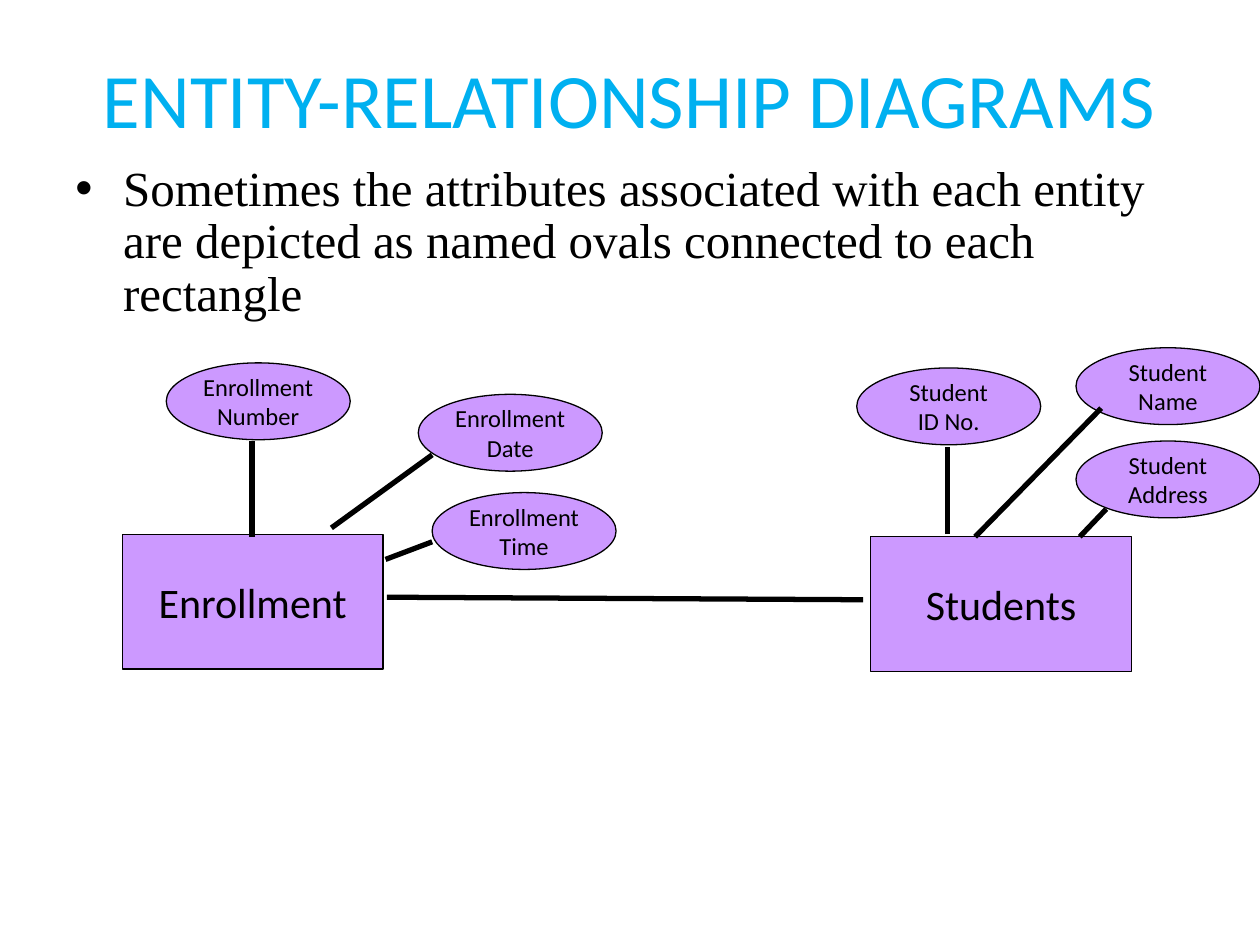
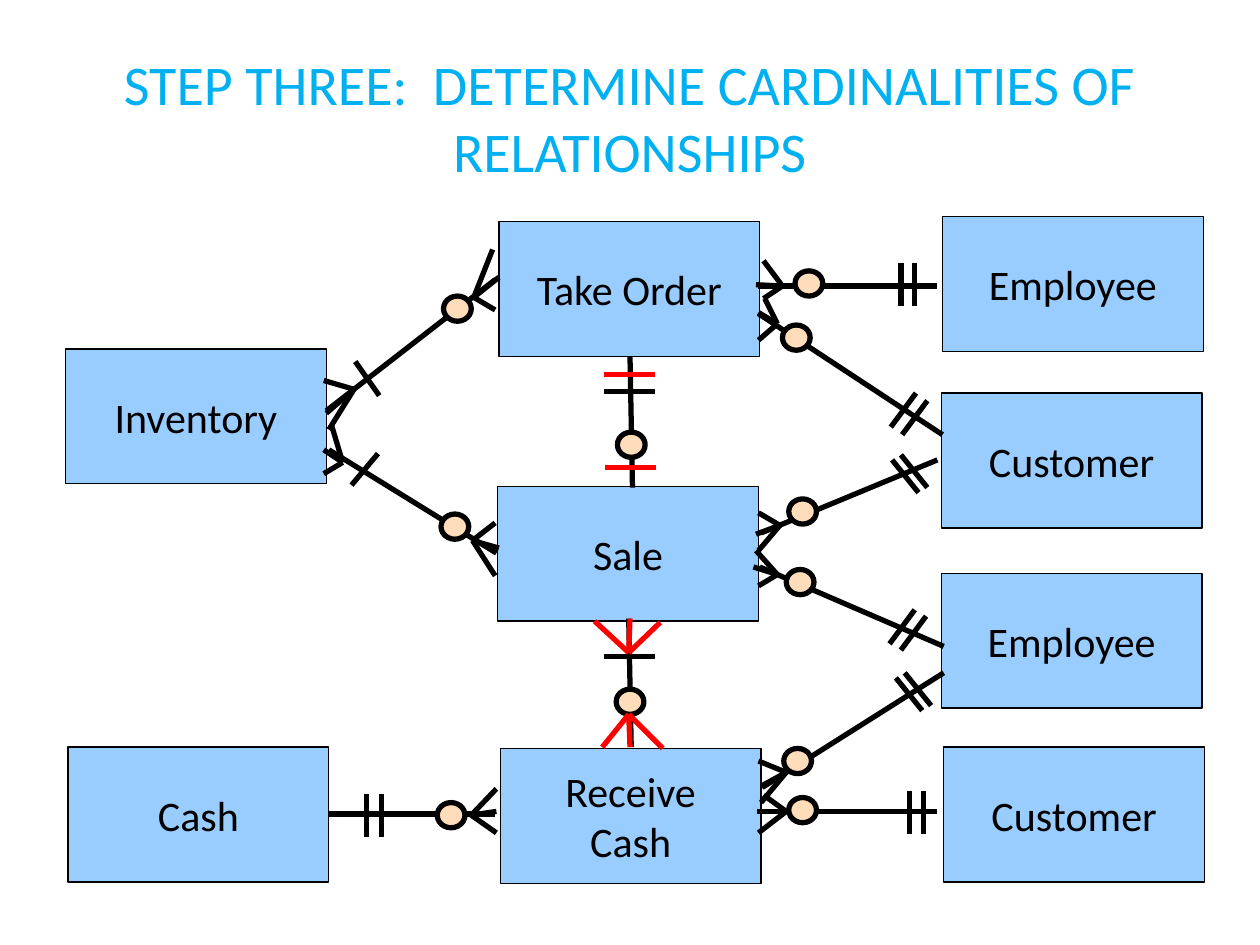
from dataclasses import dataclass

from lxml.etree import SubElement
from pptx import Presentation
from pptx.dml.color import RGBColor
from pptx.enum.shapes import MSO_CONNECTOR, MSO_SHAPE
from pptx.enum.text import MSO_ANCHOR, PP_ALIGN
from pptx.oxml.ns import qn
from pptx.util import Inches, Pt


@dataclass(frozen=True)
class Theme:
    title: str = "00B0F0"
    ink: str = "000000"
    accent: str = "FF0000"
    purple: str = "CC99FF"
    blue: str = "99CCFF"
    peach: str = "FFDDBB"
    font: str = "Calibri"
    body_font: str = "Times New Roman"
    body_size: int = 28
    entity_size: int = 24
    attribute_size: int = 14
    thin: float = 0.75
    thick: float = 3


T = Theme()
ENTITY = (2.07, 1.07)
ATTRIBUTE = (1.46, 0.61)
RING = (0.22, 0.2)

# Slide 1: labels with left and top, lines as x1, y1, x2, y2
ATTRIBUTES_TITLE = "ENTITY-RELATIONSHIP DIAGRAMS"
ATTRIBUTES_BODY = ("Sometimes the attributes associated with each entity are depicted "
                   "as named ovals connected to each rectangle")
ATTRIBUTE_ENTITIES = [("Enrollment", 0.97, 4.24), ("Students", 6.91, 4.26)]
ATTRIBUTES = [
    ("Enrollment\nNumber", 1.32, 2.88),
    ("Enrollment\nDate", 3.32, 3.13),
    ("Enrollment\nTime", 3.43, 3.91),
    ("Student\nID No.", 6.8, 2.92),
    ("Student\nName", 8.54, 2.76),
    ("Student\nAddress", 8.54, 3.5),
]
ATTRIBUTE_LINKS = [
    (3.07, 4.74, 6.85, 4.76),
    (2, 4.26, 2, 3.5),
    (2.63, 4.19, 3.43, 3.61),
    (3.06, 4.44, 3.43, 4.3),
    (7.52, 4.24, 7.52, 3.55),
    (7.74, 4.26, 8.74, 3.24),
    (8.57, 4.26, 8.78, 4.04),
]

# Slide 2
CARDINALITY_TITLE = "STEP THREE:  DETERMINE CARDINALITIES OF RELATIONSHIPS"
CARDINALITY_ENTITIES = [
    ("Take Order", 3.96, 1.76), ("Sale", 3.95, 3.86), ("Receive\nCash", 3.97, 5.94),
    ("Inventory", 0.52, 2.77), ("Cash", 0.54, 5.93),
    ("Employee", 7.48, 1.72), ("Customer", 7.47, 3.12),
    ("Employee", 7.47, 4.55), ("Customer", 7.49, 5.93),
]
RELATIONSHIPS = [
    (5, 2.83, 5.02, 3.87), (4.99, 4.91, 5.01, 5.93),
    (2.61, 3.57, 3.94, 4.39), (2.61, 6.46, 3.93, 6.46), (2.59, 3.26, 3.93, 2.22),
    (6.03, 4.5, 7.49, 5.13), (6.04, 4.23, 7.44, 3.65),
    (6.01, 6.44, 7.44, 6.44), (6.05, 6.25, 7.49, 5.34),
    (6.02, 2.27, 7.44, 2.27), (6.02, 2.49, 7.48, 3.45),
]
# "One" bars: (dx, dy), colour, starting points
BARS = [
    ((0, 0.34), T.ink, [(7.15, 2.09), (7.26, 2.09), (7.22, 6.28), (7.33, 6.28),
                        (2.91, 6.3), (3.03, 6.3)]),
    ((-0.2, 0.27), T.ink, [(7.27, 3.12), (7.36, 3.18), (7.26, 4.84), (7.35, 4.89)]),
    ((0.21, 0.26), T.ink, [(7.08, 3.65), (7.15, 3.61), (7.11, 5.38), (7.18, 5.34)]),
    ((0.19, 0.27), T.ink, [(2.82, 2.87)]),
    ((-0.21, 0.25), T.ink, [(3, 3.6)]),
    ((0.41, 0), T.ink, [(4.79, 3.11), (4.79, 5.21)]),
    ((0.41, 0), T.accent, [(4.79, 2.97), (4.8, 3.71)]),
]
# "Zero" rings: left, top
RINGS = [
    (6.31, 2.15), (6.21, 2.58), (6.26, 3.96), (6.24, 4.52), (6.22, 5.94), (6.26, 6.33),
    (3.52, 2.35), (3.5, 4.08), (3.47, 6.37), (4.9, 3.43), (4.89, 5.47),
]
# "Many" crow's feet: apex, toes, colour
FEET = [
    ((6.21, 2.27), [(6.06, 2.07), (6, 2.26), (6.06, 2.37)], T.ink),
    ((6.17, 2.57), [(6.02, 2.48), (6.07, 2.37), (6.02, 2.7)], T.ink),
    ((6.19, 4.17), [(6, 4.24), (6.02, 4.07), (6.02, 4.37)], T.ink),
    ((6.17, 4.56), [(5.98, 4.5), (6, 4.37), (6.02, 4.65)], T.ink),
    ((6.24, 6.13), [(6.04, 6.24), (6.02, 6.04), (6.04, 6.37)], T.ink),
    ((6.24, 6.44), [(6.04, 6.44), (6.06, 6.31), (6.02, 6.61)], T.ink),
    ((2.81, 3.09), [(2.57, 3.02), (2.59, 3.28), (2.61, 3.41)], T.ink),
    ((2.72, 3.67), [(2.57, 3.57), (2.63, 3.37), (2.57, 3.76)], T.ink),
    ((3.76, 2.36), [(3.96, 2.2), (3.91, 1.98), (3.93, 2.46)], T.ink),
    ((3.75, 4.29), [(3.96, 4.35), (3.93, 4.15), (3.93, 4.57)], T.ink),
    ((3.74, 6.47), [(3.94, 6.44), (3.94, 6.26), (3.94, 6.61)], T.ink),
    ((4.99, 5.18), [(5, 4.91), (5.24, 4.94), (4.72, 4.93)], T.accent),
    ((4.99, 5.67), [(5, 5.93), (4.78, 5.93), (5.26, 5.94)], T.accent),
]


def rgb(color):
    return RGBColor.from_string(color)


def add_run(p, text, size, color=T.ink, font=T.font):
    r = p.add_run()
    r.text = text
    r.font.size, r.font.name = Pt(size), font
    r.font.color.rgb = rgb(color)


def add_box(slide, left, top, width, height):
    tf = slide.shapes.add_textbox(*map(Inches, (left, top, width, height))).text_frame
    tf.word_wrap = True
    return tf


def add_title(slide, text, size, height):
    tf = add_box(slide, 0.5, 0.3, 9, height)
    tf.vertical_anchor = MSO_ANCHOR.MIDDLE
    p = tf.paragraphs[0]
    p.alignment = PP_ALIGN.CENTER
    add_run(p, text, size, T.title)


def add_bullet(slide, text):
    p = add_box(slide, 0.5, 1.25, 9, 1.35).paragraphs[0]
    p.line_spacing = 0.9
    p.space_before = Pt(0.2 * T.body_size)
    pPr = p._p.get_or_add_pPr()
    pPr.set("marL", str(Inches(0.38)))
    pPr.set("indent", str(-Inches(0.38)))
    SubElement(pPr, qn("a:buFont"), typeface="Arial")
    SubElement(pPr, qn("a:buChar"), char="•")
    add_run(p, text, T.body_size, font=T.body_font)


def add_node(slide, kind, at, size, fill, line=T.thin, label="", text_size=T.entity_size):
    """Filled, outlined shape with one centred paragraph per line of its label."""
    sp = slide.shapes.add_shape(kind, *map(Inches, (*at, *size)))
    sp.shadow.inherit = False
    sp.fill.solid()
    sp.fill.fore_color.rgb = rgb(fill)
    sp.line.color.rgb = rgb(T.ink)
    sp.line.width = Pt(line)
    if not label:
        return
    tf = sp.text_frame
    tf.word_wrap = False
    tf.vertical_anchor = MSO_ANCHOR.MIDDLE
    for i, text in enumerate(label.split("\n")):
        p = tf.add_paragraph() if i else tf.paragraphs[0]
        p.alignment = PP_ALIGN.CENTER
        add_run(p, text, text_size)


def add_entities(slide, entities, fill):
    for label, *at in entities:
        add_node(slide, MSO_SHAPE.RECTANGLE, at, ENTITY, fill, label=label)


def add_line(slide, x1, y1, x2, y2, color=T.ink):
    c = slide.shapes.add_connector(MSO_CONNECTOR.STRAIGHT, *map(Inches, (x1, y1, x2, y2)))
    c.line.color.rgb = rgb(color)
    c.line.width = Pt(T.thick)
    SubElement(c._element.spPr, qn("a:effectLst"))


def build_attributes(slide):
    add_title(slide, ATTRIBUTES_TITLE, 44, 0.95)
    add_bullet(slide, ATTRIBUTES_BODY)
    add_entities(slide, ATTRIBUTE_ENTITIES, T.purple)
    for label, *at in ATTRIBUTES:
        add_node(slide, MSO_SHAPE.OVAL, at, ATTRIBUTE, T.purple,
                 label=label, text_size=T.attribute_size)
    for link in ATTRIBUTE_LINKS:
        add_line(slide, *link)


def build_cardinalities(slide):
    add_title(slide, CARDINALITY_TITLE, 32, 1.25)
    add_entities(slide, CARDINALITY_ENTITIES, T.blue)
    for relationship in RELATIONSHIPS:
        add_line(slide, *relationship)
    for (dx, dy), color, starts in BARS:
        for x, y in starts:
            add_line(slide, x, y, x + dx, y + dy, color)
    for at in RINGS:
        add_node(slide, MSO_SHAPE.OVAL, at, RING, T.peach, T.thick)
    for apex, toes, color in FEET:
        for toe in toes:
            add_line(slide, *apex, *toe, color)


def main():
    prs = Presentation()
    prs.slide_width, prs.slide_height = Inches(10), Inches(7.5)
    for build in (build_attributes, build_cardinalities):
        build(prs.slides.add_slide(prs.slide_layouts[6]))
    prs.save("out.pptx")


if __name__ == "__main__":
    main()
